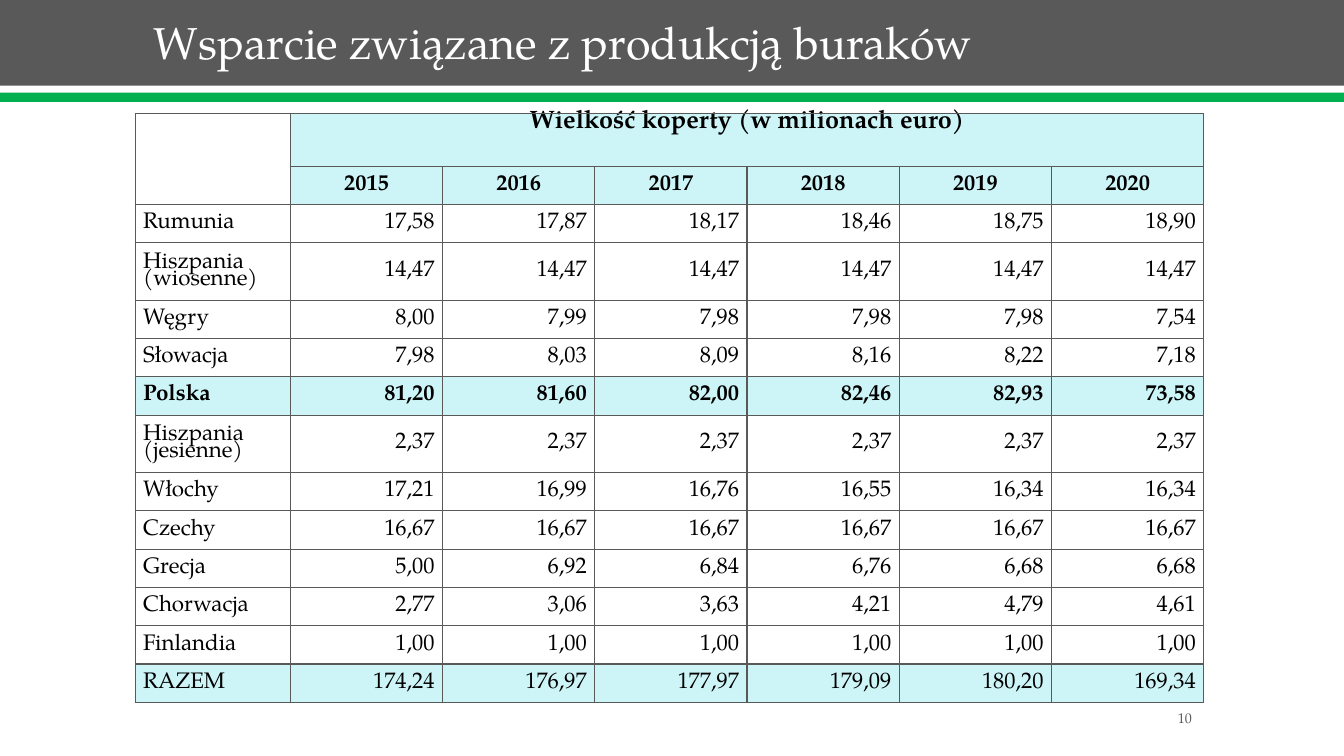
from dataclasses import dataclass
from lxml.etree import SubElement
from pptx import Presentation
from pptx.dml.color import RGBColor
from pptx.enum.shapes import MSO_SHAPE
from pptx.enum.text import MSO_ANCHOR, PP_ALIGN
from pptx.oxml.ns import qn
from pptx.util import Inches, Pt


@dataclass
class Theme:
    font: str = "TeX Gyre Pagella"
    gray: str = "595959"
    green: str = "00B050"
    aqua: str = "CDF5F7"
    white: str = "FFFFFF"
    black: str = "000000"
    title: int = 32
    heading: int = 18
    body: int = 16
    number: int = 10
    spacing: float = 0.75


theme = Theme()


def style(p, size, color, align=PP_ALIGN.LEFT, bold=False):
    p.alignment = align
    p.font.name = theme.font
    p.font.size = Pt(size)
    p.font.bold = bold
    p.font.color.rgb = RGBColor.from_string(color)


def fill_cell(cell, text, align, bold=False, fill=None, size=theme.body):
    cell.margin_left = cell.margin_right = Inches(0.08)
    cell.margin_top = cell.margin_bottom = 0
    cell.vertical_anchor = MSO_ANCHOR.MIDDLE
    cell.text = text
    for p in cell.text_frame.paragraphs:
        style(p, size, theme.black, align, bold)
        p.line_spacing = theme.spacing
    tcPr = cell._tc.get_or_add_tcPr()
    for side in ("lnL", "lnR", "lnT", "lnB"):
        ln = SubElement(tcPr, qn(f"a:{side}"), w=str(Pt(1)))
        color = SubElement(SubElement(ln, qn("a:solidFill")), qn("a:srgbClr"))
        color.set("val", theme.gray)
    if fill:
        cell.fill.solid()
        cell.fill.fore_color.rgb = RGBColor.from_string(fill)
    else:
        cell.fill.background()


prs = Presentation()
prs.slide_width = Inches(13.33)
prs.slide_height = Inches(7.5)
s = prs.slides.add_slide(prs.slide_layouts[5])

for top, height, color in ((0, 0.85, theme.gray), (0.92, 0.09, theme.green)):
    bar = s.shapes.add_shape(MSO_SHAPE.RECTANGLE, 0, Inches(top), prs.slide_width, Inches(height))
    bar.shadow.inherit = False
    bar.fill.solid()
    bar.fill.fore_color.rgb = RGBColor.from_string(color)
    bar.line.fill.background()

title = s.shapes.title
s.shapes._spTree.append(title._element)
title.left, title.top = Inches(1.42), Inches(-0.39)
title.width, title.height = Inches(10.5), Inches(1.13)
tf = title.text_frame
tf.text = "Wsparcie związane z produkcją buraków"
tf.vertical_anchor = MSO_ANCHOR.BOTTOM
p = tf.paragraphs[0]
style(p, theme.title, theme.white)
p.line_spacing = 0.9

years = ["2015", "2016", "2017", "2018", "2019", "2020"]
envelopes = [
    ("Rumunia", "17,58 17,87 18,17 18,46 18,75 18,90"),
    ("Hiszpania\n(wiosenne)", "14,47 14,47 14,47 14,47 14,47 14,47"),
    ("Węgry", "8,00 7,99 7,98 7,98 7,98 7,54"),
    ("Słowacja", "7,98 8,03 8,09 8,16 8,22 7,18"),
    ("Polska", "81,20 81,60 82,00 82,46 82,93 73,58"),
    ("Hiszpania\n(jesienne)", "2,37 2,37 2,37 2,37 2,37 2,37"),
    ("Włochy", "17,21 16,99 16,76 16,55 16,34 16,34"),
    ("Czechy", "16,67 16,67 16,67 16,67 16,67 16,67"),
    ("Grecja", "5,00 6,92 6,84 6,76 6,68 6,68"),
    ("Chorwacja", "2,77 3,06 3,63 4,21 4,79 4,61"),
    ("Finlandia", "1,00 1,00 1,00 1,00 1,00 1,00"),
    ("RAZEM", "174,24 176,97 177,97 179,09 180,20 169,34"),
]

frame = s.shapes.add_table(len(envelopes) + 2, len(years) + 1,
                           Inches(1.34), Inches(1.13), Inches(10.62), Inches(5.84))
table = frame.table
table.first_row = table.horz_banding = False
for i, column in enumerate(table.columns):
    column.width = Inches(1.51 if i else 1.54)
table.rows[0].height = Inches(0.52)
table.rows[1].height = Inches(0.38)

for row in range(2):
    fill_cell(table.cell(row, 0), "", PP_ALIGN.LEFT)
for col, year in enumerate(years, 1):
    heading = "Wielkość koperty (w milionach euro)" if col == 1 else ""
    fill_cell(table.cell(0, col), heading, PP_ALIGN.CENTER, True, theme.aqua, theme.heading)
    fill_cell(table.cell(1, col), year, PP_ALIGN.CENTER, True, theme.aqua)
table.cell(0, 1).vertical_anchor = MSO_ANCHOR.TOP
table.cell(0, 0).merge(table.cell(1, 0))
table.cell(0, 1).merge(table.cell(0, len(years)))

for row, (country, amounts) in enumerate(envelopes, 2):
    table.rows[row].height = Inches(0.57 if "\n" in country else 0.38)
    bold = country == "Polska"
    fill = theme.aqua if country in ("Polska", "RAZEM") else None
    fill_cell(table.cell(row, 0), country, PP_ALIGN.JUSTIFY, bold, fill)
    for col, amount in enumerate(amounts.split(), 1):
        fill_cell(table.cell(row, col), amount, PP_ALIGN.RIGHT, bold, fill)

sp = s.shapes.add_textbox(Inches(10.42), Inches(6.97), Inches(1.5), Inches(0.3))
tf = sp.text_frame
tf.word_wrap = True
tf.vertical_anchor = MSO_ANCHOR.MIDDLE
tf.text = "10"
style(tf.paragraphs[0], theme.number, theme.gray, PP_ALIGN.RIGHT)

prs.save("out.pptx")
